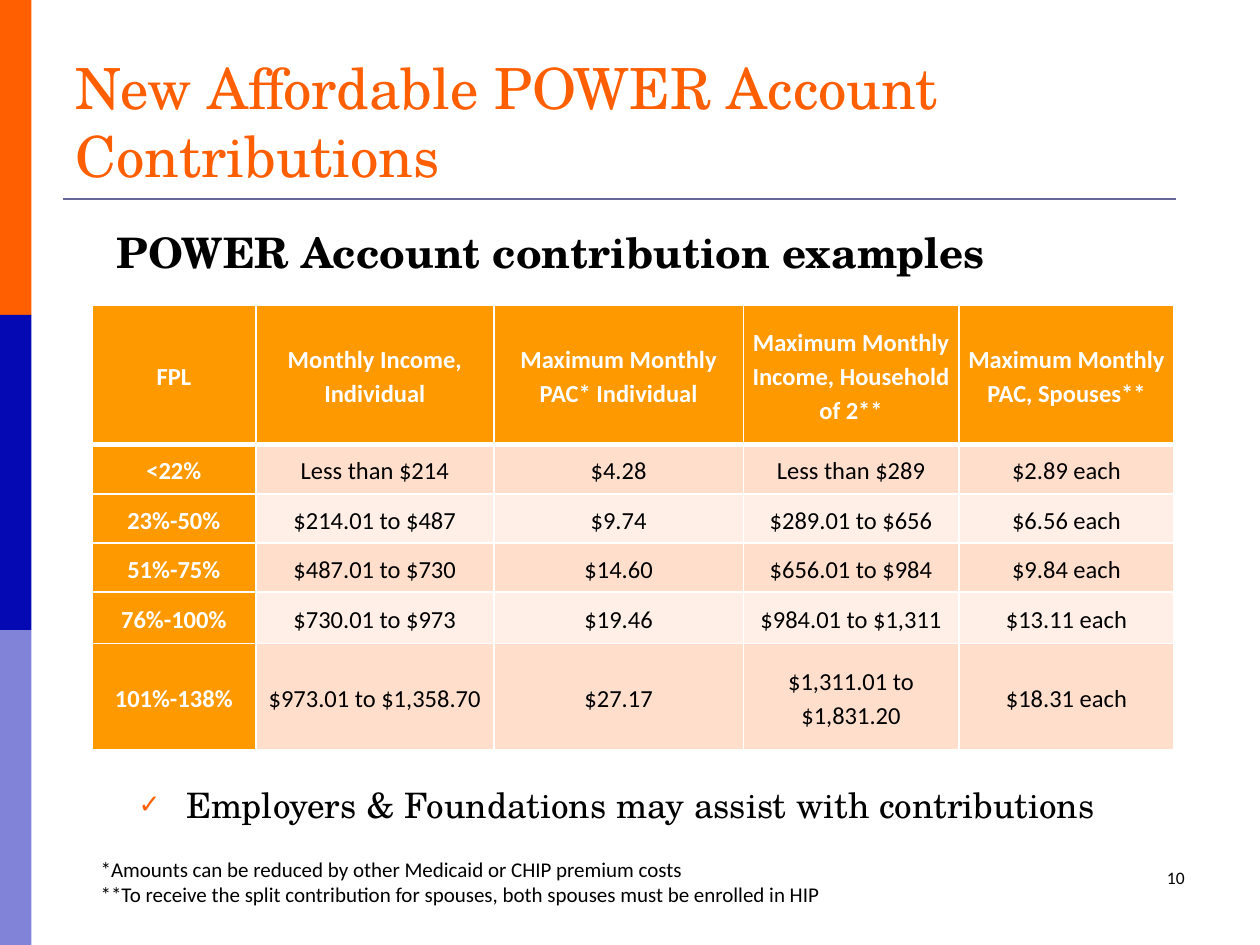
from dataclasses import dataclass

from lxml.etree import SubElement
from pptx import Presentation
from pptx.dml.color import RGBColor
from pptx.enum.shapes import MSO_CONNECTOR as Connector, MSO_SHAPE as Shape
from pptx.enum.text import MSO_ANCHOR as Anchor, MSO_AUTO_SIZE as AutoSize, PP_ALIGN as Align
from pptx.oxml.ns import qn
from pptx.util import Inches, Pt

COLORS = {
    "orange": "FF5F00",
    "blue": "0509B3",
    "rule": "666699",
    "header": "FF9900",
    "band_dark": "FFDECC",
    "band_light": "FFEFE7",
    "black": "000000",
    "white": "FFFFFF",
}
SERIF, SANS = "TeX Gyre Schola", "Calibri"


@dataclass
class Box:
    left: float
    top: float
    width: float
    height: float

    def lengths(self):
        return [Inches(value) for value in (self.left, self.top, self.width, self.height)]


@dataclass
class Style:
    font: str
    size: float
    color: str = "black"
    bold: bool = False
    align: Align = Align.LEFT


@dataclass
class Band:
    color: str
    opacity: int = 100


@dataclass
class Note:
    text: str
    box: Box
    style: Style


BANDS = [Band("orange"), Band("blue"), Band("blue", 50)]
NOTES = [
    Note("10", Box(7.17, 6.83, 2.33, 0.5), Style(SANS, 10, align=Align.RIGHT)),
    Note("POWER Account contribution examples", Box(0.83, 1.75, 8.67, 0.5),
         Style(SERIF, 24, bold=True)),
    Note("*Amounts can be reduced by other Medicaid or CHIP premium costs\n"
         "**To receive the split contribution for spouses, both spouses must be enrolled in HIP",
         Box(0.7, 6.75, 9.22, 0.5), Style(SANS, 12)),
]
COLUMN_WIDTHS = [1.3, 1.89, 1.98, 1.71, 1.71]
ROW_HEIGHTS = [1.11, 0.39, 0.39, 0.39, 0.41, 0.84]
HOUSEHOLD_COLUMN = 3
CONTRIBUTIONS = [
    ["FPL", "Monthly Income, Individual", "Maximum Monthly PAC* Individual",
     "Maximum Monthly Income, Household of 2**", "Maximum Monthly PAC, Spouses**"],
    ["<22%", "Less than $214", "$4.28", "Less than $289", "$2.89 each"],
    ["23%-50%", "$214.01 to $487", "$9.74", "$289.01 to $656", "$6.56 each"],
    ["51%-75%", "$487.01 to $730", "$14.60", "$656.01 to $984", "$9.84 each"],
    ["76%-100%", "$730.01 to $973", "$19.46", "$984.01 to $1,311", "$13.11 each"],
    ["101%-138%", "$973.01 to $1,358.70", "$27.17", "$1,311.01 to $1,831.20", "$18.31 each"],
]


def rgb(name: str) -> RGBColor:
    return RGBColor.from_string(COLORS[name])


def write(text_frame, text: str, style: Style) -> None:
    text_frame.text = text
    for paragraph in text_frame.paragraphs:
        paragraph.alignment = style.align
        for run in paragraph.runs:
            run.font.name = style.font
            run.font.size = Pt(style.size)
            run.font.bold = style.bold
            run.font.color.rgb = rgb(style.color)


def place(shape, box: Box) -> None:
    shape.left, shape.top, shape.width, shape.height = box.lengths()


def add_side_bands(slide, bands: list[Band]) -> None:
    height = 7.5 / len(bands)
    for index, band in enumerate(bands):
        box = Box(0, index * height, 0.25, height)
        shape = slide.shapes.add_shape(Shape.RECTANGLE, *box.lengths())
        shape.shadow.inherit = False
        shape.line.fill.background()
        shape.fill.solid()
        shape.fill.fore_color.rgb = rgb(band.color)
        if band.opacity < 100:
            color = shape._element.spPr.find(".//" + qn("a:srgbClr"))
            SubElement(color, qn("a:alpha"), val=str(band.opacity * 1000))


def add_title_rule(slide) -> None:
    line = slide.shapes.add_connector(
        Connector.STRAIGHT, Inches(0.5), Inches(1.58), Inches(9.33), Inches(1.58))
    line.line.color.rgb = rgb("rule")
    line.line.width = Pt(1.5)
    SubElement(line._element.spPr, qn("a:effectLst"))


def add_note(slide, note: Note) -> None:
    text_frame = slide.shapes.add_textbox(*note.box.lengths()).text_frame
    text_frame.word_wrap = True
    write(text_frame, note.text, note.style)


def fill_title(title) -> None:
    place(title, Box(0.5, 0.3, 9, 1.25))
    write(title.text_frame, "New Affordable POWER Account Contributions",
          Style(SERIF, 32.4, "orange"))
    title.text_frame.vertical_anchor = Anchor.BOTTOM
    title.text_frame.auto_size = AutoSize.NONE


def fill_checklist(body) -> None:
    place(body, Box(1, 6.17, 8.5, 0.5))
    write(body.text_frame, "Employers & Foundations may assist with contributions",
          Style(SERIF, 20))
    body.text_frame.auto_size = AutoSize.NONE
    paragraph = body.text_frame.paragraphs[0]
    paragraph.space_before = Pt(0)
    properties = paragraph._p.get_or_add_pPr()
    properties.set("marL", str(Inches(0.38)))
    properties.set("indent", str(-Inches(0.38)))
    bullet_color = SubElement(properties, qn("a:buClr"))
    SubElement(bullet_color, qn("a:srgbClr"), val=COLORS["orange"])
    SubElement(properties, qn("a:buSzPct"), val="75000")
    SubElement(properties, qn("a:buFont"), typeface=SANS)
    SubElement(properties, qn("a:buChar"), char="✓")


def format_cell(cell, row: int, column: int) -> None:
    heading = row == 0 or column == 0
    compact = row > 0 and column == HOUSEHOLD_COLUMN
    write(cell.text_frame, CONTRIBUTIONS[row][column],
          Style(SANS, 14, "white" if heading else "black", heading, Align.CENTER))
    paragraph = cell.text_frame.paragraphs[0]
    paragraph.line_spacing = 1.15
    paragraph.space_before = paragraph.space_after = Pt(0 if compact else 6)
    cell.vertical_anchor = Anchor.MIDDLE
    cell.margin_left = cell.margin_right = Inches(0 if compact else 0.06)
    cell.margin_top = cell.margin_bottom = 0

    properties = cell._tc.get_or_add_tcPr()
    for side in "LRTB":
        below_header = (row, side) in ((0, "B"), (1, "T"))
        border = SubElement(properties, qn(f"a:ln{side}"), w=str(Pt(3 if below_header else 1)))
        fill = SubElement(border, qn("a:solidFill"))
        SubElement(fill, qn("a:srgbClr"), val=COLORS["white"])
    cell.fill.solid()
    band = "band_dark" if row % 2 else "band_light"
    cell.fill.fore_color.rgb = rgb("header" if heading else band)


def add_contribution_table(slide) -> None:
    box = Box(0.73, 2.42, sum(COLUMN_WIDTHS), sum(ROW_HEIGHTS))
    table = slide.shapes.add_table(
        len(ROW_HEIGHTS), len(COLUMN_WIDTHS), *box.lengths()).table
    for column, width in zip(table.columns, COLUMN_WIDTHS):
        column.width = Inches(width)
    for row, height in zip(table.rows, ROW_HEIGHTS):
        row.height = Inches(height)
    for row in range(len(ROW_HEIGHTS)):
        for column in range(len(COLUMN_WIDTHS)):
            format_cell(table.cell(row, column), row, column)


def main() -> None:
    presentation = Presentation()
    presentation.slide_width, presentation.slide_height = Inches(10), Inches(7.5)
    slide = presentation.slides.add_slide(presentation.slide_layouts[1])
    add_side_bands(slide, BANDS)
    add_title_rule(slide)
    fill_title(slide.shapes.title)
    fill_checklist(slide.placeholders[1])
    add_contribution_table(slide)
    for note in NOTES:
        add_note(slide, note)
    presentation.save("out.pptx")


if __name__ == "__main__":
    main()
